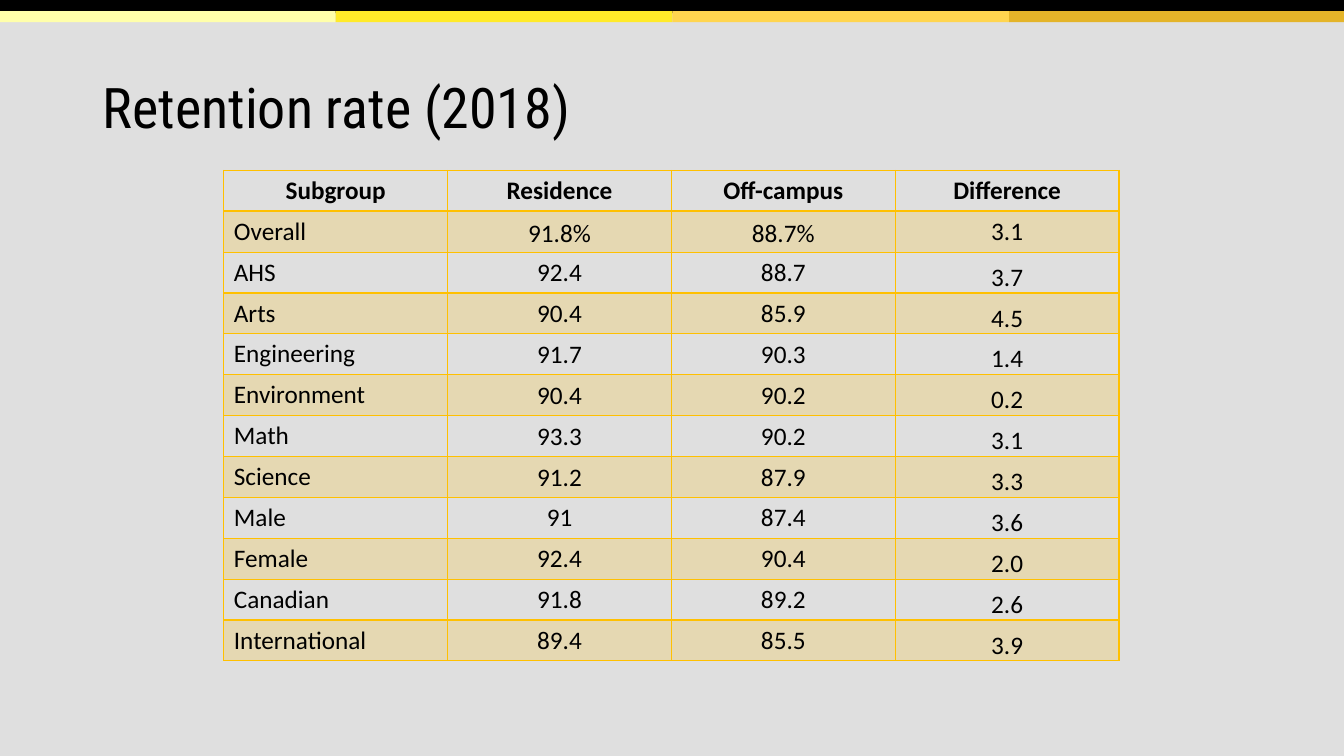
from lxml.etree import SubElement
from pptx import Presentation
from pptx.dml.color import RGBColor
from pptx.enum.shapes import MSO_SHAPE as Preset
from pptx.enum.text import MSO_ANCHOR as Anchor, MSO_AUTO_SIZE as AutoSize, PP_ALIGN as Align
from pptx.oxml.ns import qn
from pptx.util import Inches, Pt

HEADINGS = ("Subgroup", "Residence", "Off-campus", "Difference")
RATES = (
    ("Overall", "91.8%", "88.7%", "3.1"),
    ("AHS", "92.4", "88.7", "3.7"),
    ("Arts", "90.4", "85.9", "4.5"),
    ("Engineering", "91.7", "90.3", "1.4"),
    ("Environment", "90.4", "90.2", "0.2"),
    ("Math", "93.3", "90.2", "3.1"),
    ("Science", "91.2", "87.9", "3.3"),
    ("Male", "91", "87.4", "3.6"),
    ("Female", "92.4", "90.4", "2.0"),
    ("Canadian", "91.8", "89.2", "2.6"),
    ("International", "89.4", "85.5", "3.9"),
)
STRIPES = ("FFFFAA", "FFEA29", "FFD54F", "E4B429")


def paint(target, color):
    target.solid()
    target.fore_color.rgb = RGBColor.from_string(color)


def write(frame, text, font="Calibri", size=18, color="000000", bold=False,
          align=Align.LEFT, spacing=1.0):
    frame.text = text
    paragraph = frame.paragraphs[0]
    paragraph.alignment = align
    paragraph.line_spacing = spacing
    style = paragraph.runs[0].font
    style.name, style.size, style.bold = font, Pt(size), bold
    style.color.rgb = RGBColor.from_string(color)


class RetentionSlide:
    gold = "FFC000"
    title_font = "Roboto Condensed"

    def __init__(self, deck):
        self.slide = deck.slides.add_slide(deck.slide_layouts[5])
        paint(self.slide.background.fill, "DFDFDF")

    def band(self, left, top, width, height, color):
        band = self.slide.shapes.add_shape(
            Preset.RECTANGLE, *map(Inches, (left, top, width, height)))
        band.shadow.inherit = False
        paint(band.fill, color)
        band.line.fill.background()

    def title(self, text, left, top, width, height):
        title = self.slide.shapes.title
        title.left, title.top, title.width, title.height = map(
            Inches, (left, top, width, height))
        frame = title.text_frame
        frame.word_wrap = True
        frame.auto_size = AutoSize.NONE
        frame.vertical_anchor = Anchor.MIDDLE
        write(frame, text, font=self.title_font, size=40, spacing=0.9)

    def border(self, cell, bottom):
        properties = cell._tc.get_or_add_tcPr()
        for side, weight in (("L", 1), ("R", 1), ("T", 1), ("B", bottom)):
            edge = SubElement(properties, qn(f"a:ln{side}"), w=str(Pt(weight)))
            fill = SubElement(edge, qn("a:solidFill"))
            SubElement(fill, qn("a:srgbClr"), val=self.gold)

    def shade(self, cell, shaded):
        if not shaded:
            cell.fill.background()
            return
        paint(cell.fill, self.gold)
        tint = cell._tc.tcPr.find(qn("a:solidFill"))[0]
        SubElement(tint, qn("a:alpha"), val="20000")

    def place(self, cell, row, column):
        if row == 0 or column == 0 or (row == 1 and column == 3):
            return
        cell.vertical_anchor = Anchor.BOTTOM if column == 3 else Anchor.MIDDLE
        cell.margin_left = cell.margin_right = Inches(0.07 if row == 1 else 0.01)
        cell.margin_top = Inches(0 if row == 1 else 0.01)
        cell.margin_bottom = Inches(0)

    def table(self, records, left, top, column_width, row_height):
        rows, columns = len(records), len(records[0])
        table = self.slide.shapes.add_table(
            rows, columns, Inches(left), Inches(top),
            Inches(column_width * columns), Inches(row_height * rows)).table
        table.horz_banding = False
        for row, record in enumerate(records):
            table.rows[row].height = Inches(row_height)
            for column, text in enumerate(record):
                cell = table.cell(row, column)
                header = row == 0
                self.border(cell, bottom=2 if header else 1)
                self.shade(cell, row % 2 == 1)
                self.place(cell, row, column)
                write(cell.text_frame, text, bold=header,
                      align=Align.CENTER if header or column else Align.LEFT,
                      spacing=1.15 if row == 1 and column in (1, 2) else 1.0)


def main():
    deck = Presentation()
    deck.slide_width, deck.slide_height = Inches(13.33), Inches(7.5)
    page = RetentionSlide(deck)
    page.band(-0.01, 0, 13.35, 0.13, "000000")
    for index, color in enumerate(STRIPES):
        page.band(-0.01 + index * 3.34, 0.11, 3.34, 0.11, color)
    page.title("Retention rate (2018)", 0.92, 0.79, 11.5, 0.6)
    page.table((HEADINGS, *RATES), 2.22, 1.69, 2.22, 0.4)
    deck.save("out.pptx")


if __name__ == "__main__":
    main()
